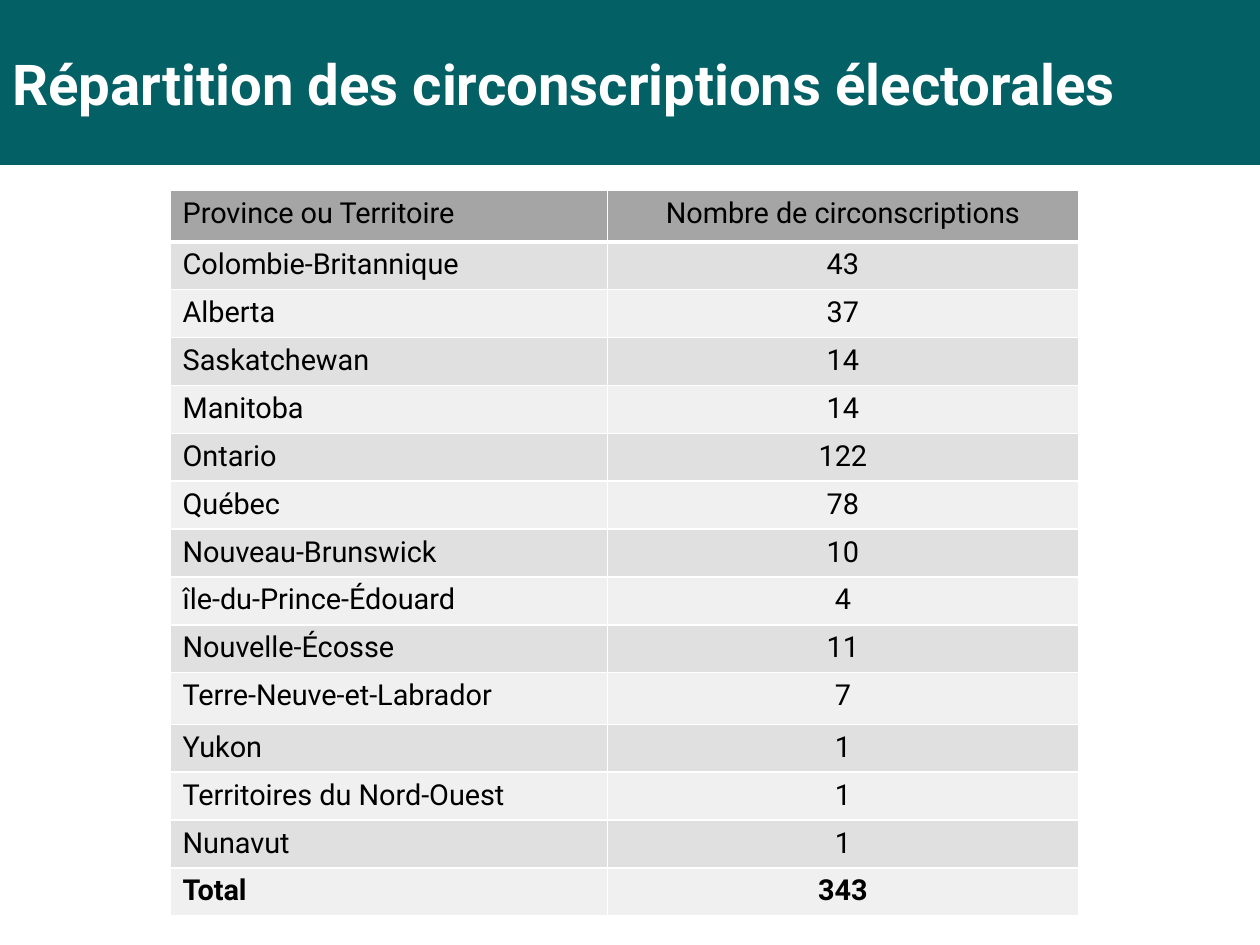
from lxml import etree
from pptx import Presentation
from pptx.dml.color import RGBColor
from pptx.enum import shapes, text
from pptx.oxml.ns import qn
from pptx.util import Inches, Pt

# Content
TITLE = "Répartition des circonscriptions électorales"
ROWS = [
    ("Province ou Territoire", "Nombre de circonscriptions"),
    ("Colombie-Britannique", "43"),
    ("Alberta", "37"),
    ("Saskatchewan", "14"),
    ("Manitoba", "14"),
    ("Ontario", "122"),
    ("Québec", "78"),
    ("Nouveau-Brunswick", "10"),
    ("île-du-Prince-Édouard", "4"),
    ("Nouvelle-Écosse", "11"),
    ("Terre-Neuve-et-Labrador", "7"),
    ("Yukon", "1"),
    ("Territoires du Nord-Ouest", "1"),
    ("Nunavut", "1"),
    ("Total", "343"),
]

# Format
COLOURS = {"band": "036064", "white": "FFFFFF", "black": "000000",
           "header": "A5A5A5", "odd": "E0E0E0", "even": "F0F0F0"}
COLUMN_WIDTHS = (3.47, 3.74)
ROW_HEIGHT, TALL_HEIGHT = 0.38, 0.41
TALL_ROWS = (0, 10)
ALIGNMENTS = (text.PP_ALIGN.LEFT, text.PP_ALIGN.CENTER)
TITLE_FONT = {"name": "Roboto", "size": Pt(32.2), "bold": True}
CELL_FONT = {"name": "Roboto", "size": Pt(16.5), "bold": False}


def colour(name):
    return RGBColor.from_string(COLOURS[name])


def write(para, words, font, colour_name):
    span = para.add_run()
    span.text = words
    for name, value in font.items():
        setattr(span.font, name, value)
    span.font.color.rgb = colour(colour_name)


def set_borders(cell, widths):
    """Draw white borders; they must come before the fill in the cell's XML."""
    properties = cell._tc.get_or_add_tcPr()
    for side, width in widths.items():
        line = etree.SubElement(properties, qn(f"a:ln{side}"), w=str(Pt(width)))
        fill = etree.SubElement(line, qn("a:solidFill"))
        etree.SubElement(fill, qn("a:srgbClr"), val=COLOURS["white"])


def add_title(page):
    band = page.shapes.add_shape(shapes.MSO_SHAPE.RECTANGLE, 0, 0, Inches(10), Inches(1.31))
    band.shadow.inherit = False
    band.fill.solid()
    band.fill.fore_color.rgb = colour("band")
    band.line.fill.background()

    box = page.shapes.add_textbox(0, Inches(0.08), Inches(10.54), Inches(1.22))
    frame = box.text_frame
    frame.word_wrap = True
    frame.vertical_anchor = text.MSO_ANCHOR.MIDDLE
    para = frame.paragraphs[0]
    para.line_spacing = 0.9
    write(para, TITLE, TITLE_FONT, "white")


def add_seat_table(page):
    heights = [TALL_HEIGHT if i in TALL_ROWS else ROW_HEIGHT for i in range(len(ROWS))]
    table = page.shapes.add_table(
        len(ROWS), len(COLUMN_WIDTHS), Inches(1.35), Inches(1.51),
        Inches(sum(COLUMN_WIDTHS)), Inches(sum(heights))).table
    for column, width in zip(table.columns, COLUMN_WIDTHS):
        column.width = Inches(width)

    last = len(ROWS) - 1
    for i, (values, height) in enumerate(zip(ROWS, heights)):
        table.rows[i].height = Inches(height)
        shade = "header" if i == 0 else "odd" if i % 2 else "even"
        font = CELL_FONT | {"bold": i == last}
        borders = {"L": 1, "R": 1, "T": 3 if i == 1 else 1, "B": 3 if i == 0 else 1}
        for j, value in enumerate(values):
            cell = table.cell(i, j)
            set_borders(cell, borders)
            cell.fill.solid()
            cell.fill.fore_color.rgb = colour(shade)
            para = cell.text_frame.paragraphs[0]
            para.alignment = ALIGNMENTS[j]
            write(para, value, font, "black")


def main():
    deck = Presentation()
    deck.slide_width, deck.slide_height = Inches(10), Inches(7.5)
    page = deck.slides.add_slide(deck.slide_layouts[6])
    add_title(page)
    add_seat_table(page)
    deck.save("out.pptx")


if __name__ == "__main__":
    main()
